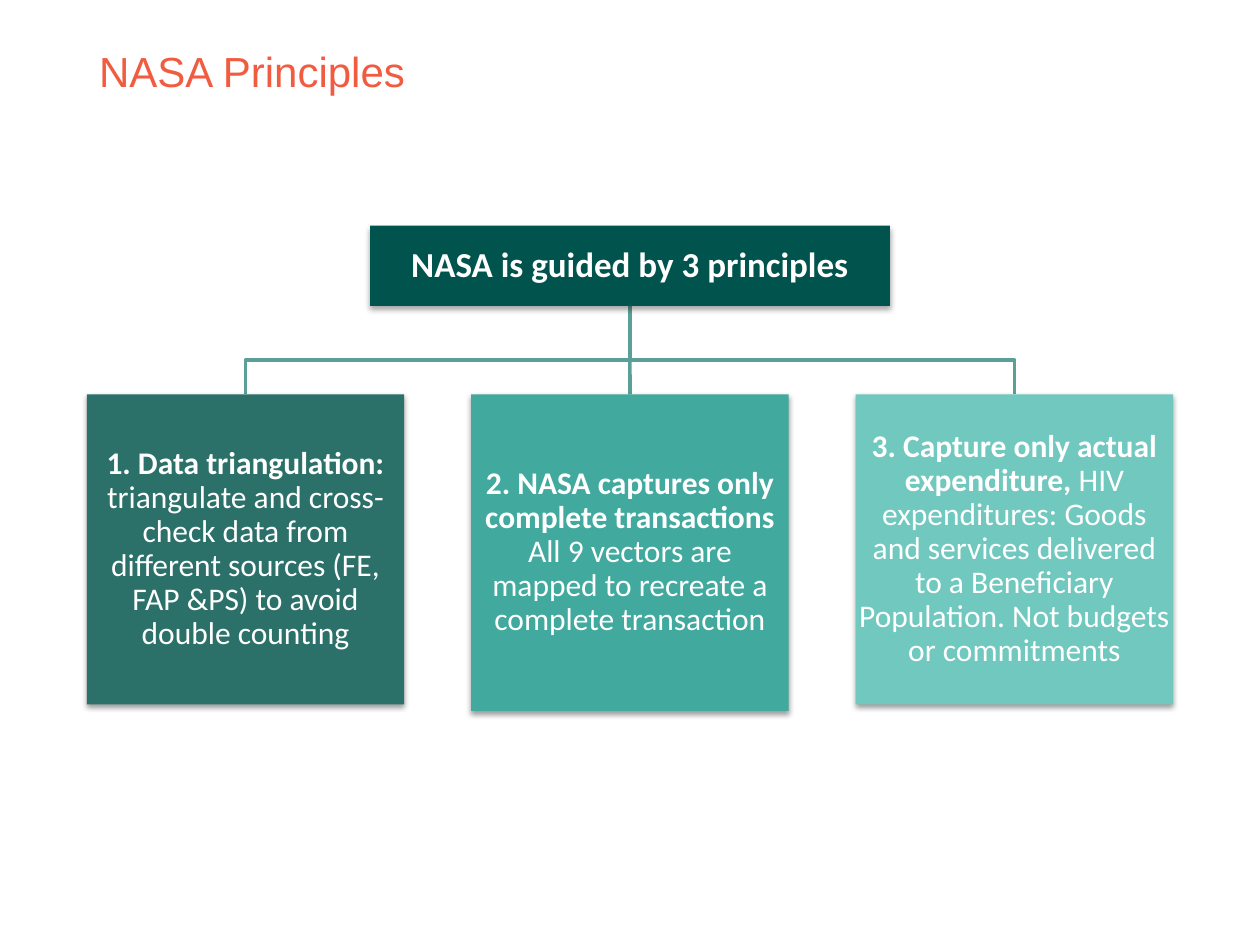
from lxml.etree import SubElement
from pptx import Presentation
from pptx.dml.color import RGBColor
from pptx.enum.shapes import MSO_CONNECTOR, MSO_SHAPE
from pptx.enum.text import MSO_ANCHOR, PP_ALIGN
from pptx.oxml.ns import qn
from pptx.util import Cm, Pt

TITLE = "NASA Principles"
ROOT = "NASA is guided by 3 principles"
# bold lead, plain text, fill colour, height in cm
PRINCIPLES = [
    ("1. Data triangulation: ",
     "triangulate and cross-check data from different sources (FE, FAP &PS) "
     "to avoid double counting", "2B7169", 6.25),
    ("2. NASA captures only complete transactions ",
     "All 9 vectors are mapped to recreate a complete transaction",
     "41A99D", 6.38),
    ("3. Capture only actual expenditure, ",
     "HIV expenditures: Goods and services delivered to a Beneficiary "
     "Population. Not budgets or commitments", "70C8BE", 6.25),
]
THEME = {
    "title": "F15B40", "root": "00544D", "line": "5AA098", "text": "FFFFFF",
    "title_font": "Arial", "body_font": "Calibri",
    "title_size": 24, "root_size": 20, "body_size": 18, "line_width": 2,
}

# Layout in cm
SLIDE_W, SLIDE_H = 25.4, 19.05
CENTER = SLIDE_W / 2
MARGIN = 1.75
ROOT_TOP, ROOT_W, ROOT_H = 4.55, 10.48, 1.62
ROOT_BOTTOM = ROOT_TOP + ROOT_H
BEND_Y, BOX_TOP = 7.26, 7.95
BOX_W = 6.4
PITCH = (SLIDE_W - 2 * MARGIN - BOX_W) / 2


def write(sp, runs, *, font, size, color, align=PP_ALIGN.LEFT, inset=None,
          spacing=None):
    """Fill a shape with one paragraph made of (text, bold) runs."""
    tf = sp.text_frame
    tf.word_wrap = True
    tf.vertical_anchor = MSO_ANCHOR.MIDDLE
    if inset is not None:
        tf.margin_left = tf.margin_right = Cm(inset)
        tf.margin_top = tf.margin_bottom = Cm(inset)
    p = tf.paragraphs[0]
    p.alignment = align
    p.line_spacing = spacing
    for text, bold in runs:
        r = p.add_run()
        r.text = text
        r.font.name, r.font.size, r.font.bold = font, Pt(size), bold
        r.font.color.rgb = RGBColor.from_string(color)


def add_shadow(sp, alpha):
    """Drop a soft black shadow straight down; alpha is in percent."""
    sp.shadow.inherit = False
    effects = sp._element.spPr.find(qn("a:effectLst"))
    shadow = SubElement(effects, qn("a:outerShdw"), blurRad=str(Pt(3.1)),
                        dist=str(Pt(1.7)), dir="5400000", rotWithShape="0")
    black = SubElement(shadow, qn("a:srgbClr"), val="000000")
    SubElement(black, qn("a:alpha"), val=str(alpha * 1000))


def add_box(s, center, top, width, height, fill, runs, size, alpha):
    sp = s.shapes.add_shape(MSO_SHAPE.RECTANGLE, Cm(center - width / 2),
                            Cm(top), Cm(width), Cm(height))
    sp.fill.solid()
    sp.fill.fore_color.rgb = RGBColor.from_string(fill)
    sp.line.fill.background()
    add_shadow(sp, alpha)
    write(sp, runs, font=THEME["body_font"], size=size, color=THEME["text"],
          align=PP_ALIGN.CENTER, inset=0.03, spacing=0.9)
    return sp


def style_line(line):
    line.color.rgb = RGBColor.from_string(THEME["line"])
    line.width = Pt(THEME["line_width"])


def add_branch(s, x):
    builder = s.shapes.build_freeform(Cm(CENTER), Cm(ROOT_BOTTOM))
    corners = [(CENTER, BEND_Y), (x, BEND_Y), (x, BOX_TOP)]
    builder.add_line_segments([(Cm(a), Cm(b)) for a, b in corners],
                              close=False)
    sp = builder.convert_to_shape()
    sp.fill.background()
    sp.shadow.inherit = False
    style_line(sp.line)


def add_stem(s):
    stem = s.shapes.add_connector(MSO_CONNECTOR.STRAIGHT, Cm(CENTER),
                                  Cm(ROOT_BOTTOM), Cm(CENTER), Cm(BOX_TOP))
    style_line(stem.line)
    SubElement(stem._element.spPr, qn("a:effectLst"))
    return stem


def main():
    prs = Presentation()
    prs.slide_width, prs.slide_height = Cm(SLIDE_W), Cm(SLIDE_H)
    s = prs.slides.add_slide(prs.slide_layouts[6])

    title = s.shapes.add_textbox(Cm(MARGIN), Cm(0.8),
                                 Cm(SLIDE_W - 2 * MARGIN), Cm(1.27))
    write(title, [(TITLE, False)], font=THEME["title_font"],
          size=THEME["title_size"], color=THEME["title"])

    centers = [CENTER + (i - 1) * PITCH for i in range(len(PRINCIPLES))]
    add_branch(s, centers[2])
    stem = add_stem(s)
    add_branch(s, centers[0])

    root = add_box(s, CENTER, ROOT_TOP, ROOT_W, ROOT_H, THEME["root"],
                   [(ROOT, True)], THEME["root_size"], 35)
    boxes = [
        add_box(s, x, BOX_TOP, BOX_W, height, fill,
                [(lead, True), (text, False)], THEME["body_size"], 38)
        for x, (lead, text, fill, height) in zip(centers, PRINCIPLES)
    ]
    stem.begin_connect(root, 2)
    stem.end_connect(boxes[1], 0)

    prs.save("out.pptx")


if __name__ == "__main__":
    main()
